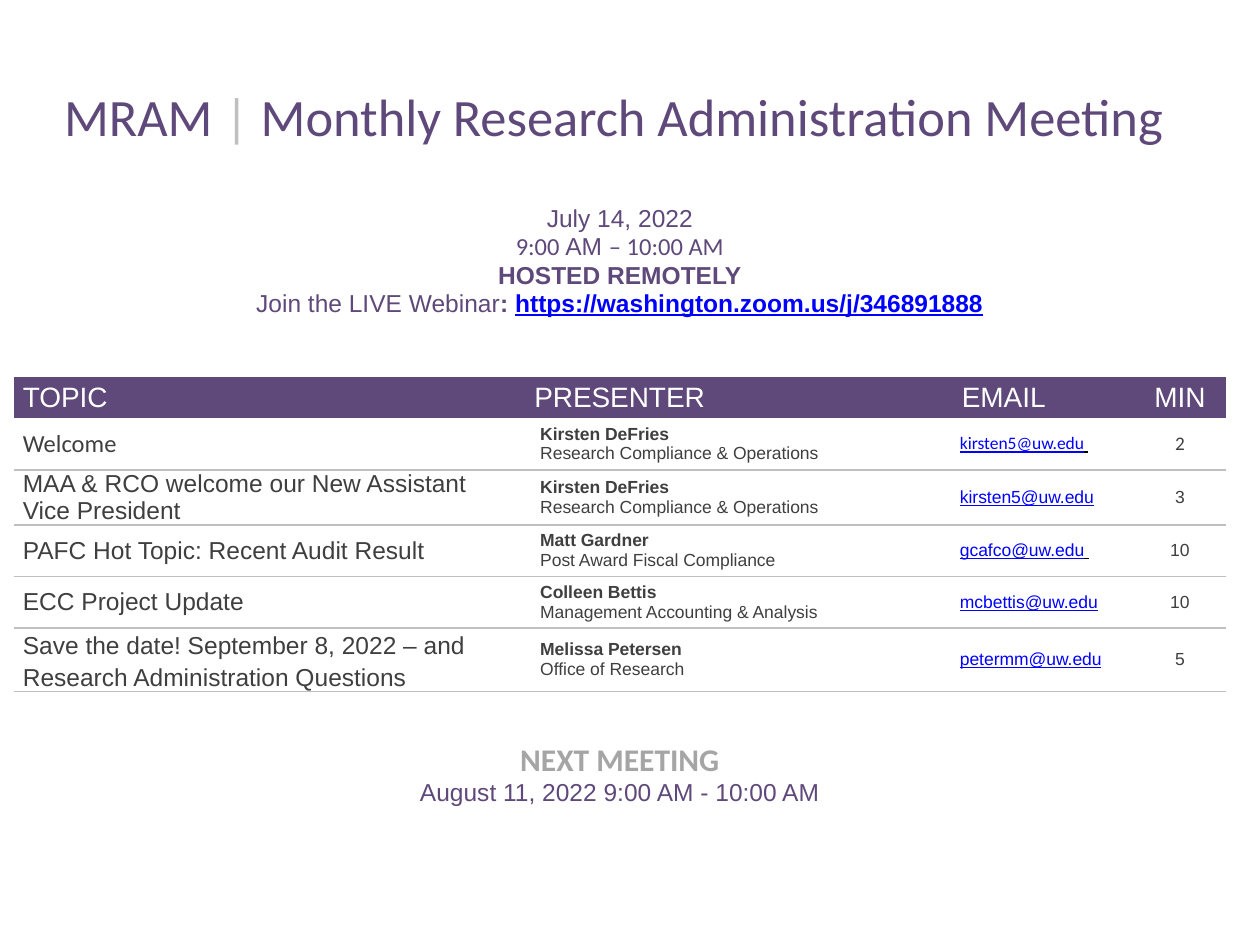
from dataclasses import dataclass
from typing import NamedTuple

from lxml.etree import SubElement
from pptx import Presentation
from pptx.dml.color import RGBColor as Rgb
from pptx.enum.text import MSO_ANCHOR as Anchor, PP_ALIGN as Align
from pptx.oxml import parse_xml
from pptx.oxml.ns import nsdecls, qn
from pptx.util import Cm, Pt


@dataclass(frozen=True)
class Theme:
    purple: str = "5F497A"
    rule: str = "BFBFBF"
    grey: str = "A5A5A5"
    ink: str = "3F3F3F"
    link: str = "0000FF"
    black: str = "000000"
    white: str = "FFFFFF"
    sans: str = "Arial"
    humanist: str = "Calibri"
    title: int = 30
    next_heading: int = 18
    header: int = 16
    body: int = 14
    first_minutes: int = 11
    detail: int = 10


class Piece(NamedTuple):
    text: str
    color: str
    size: int
    font: str = "Arial"
    bold: bool = False
    underline: bool = False


class Topic(NamedTuple):
    title: str
    presenter: str
    office: str
    email: str
    minutes: str
    font: str = "Arial"
    minutes_size: int = 10
    email_tail: str = ""
    spacing: float = 1.0


THEME = Theme()
NO_STYLE = "{2D5ABB26-0587-4C30-8999-92F81FD0307C}"
COLUMN_WIDTHS = (10.31, 8.46, 3.81, 1.85)
TITLE_ROW, DETAILS_ROW, HEADER_ROW, TOPIC_ROW, NEXT_ROW = 1.57, 4.55, 0.84, 1.04, 2.34
SIDE, WIDE_SIDE = 0.18, 0.3

TOPICS = (
    Topic("Welcome", "Kirsten DeFries", "Research Compliance & Operations",
          "kirsten5@uw.edu", "2", THEME.humanist, THEME.first_minutes, " "),
    Topic("MAA & RCO welcome our New Assistant Vice President", "Kirsten DeFries",
          "Research Compliance & Operations", "kirsten5@uw.edu", "3"),
    Topic("PAFC Hot Topic: Recent Audit Result", "Matt Gardner",
          "Post Award Fiscal Compliance", "gcafco@uw.edu", "10", email_tail=" "),
    Topic("ECC Project Update", "Colleen Bettis",
          "Management Accounting & Analysis", "mcbettis@uw.edu", "10"),
    Topic("Save the date! September 8, 2022 – and Research Administration Questions",
          "Melissa Petersen", "Office of Research", "petermm@uw.edu", "5", spacing=1.15),
)


def fill_cell(cell, lines: list[list[Piece]], fill: str = THEME.white,
              align: Align = Align.LEFT, anchor: Anchor = Anchor.MIDDLE,
              left: float = SIDE, right: float = SIDE, top: float = 0,
              bottom: float = 0, spacing: float = 1.0) -> None:
    """Write paragraphs of formatted pieces into a table cell."""
    cell.fill.solid()
    cell.fill.fore_color.rgb = Rgb.from_string(fill)
    layout = {"vertical_anchor": anchor, "margin_left": Cm(left), "margin_right": Cm(right),
              "margin_top": Cm(top), "margin_bottom": Cm(bottom)}
    for name, value in layout.items():
        setattr(cell, name, value)
    frame = cell.text_frame
    for index, pieces in enumerate(lines):
        paragraph = frame.add_paragraph() if index else frame.paragraphs[0]
        paragraph.alignment = align
        paragraph.line_spacing = spacing
        for piece in pieces:
            run = paragraph.add_run()
            run.text = piece.text
            font_format = {"name": piece.font, "size": Pt(piece.size),
                           "bold": piece.bold, "underline": piece.underline}
            for name, value in font_format.items():
                setattr(run.font, name, value)
            run.font.color.rgb = Rgb.from_string(piece.color)


def rule_below(cell) -> None:
    """Draw a thin line along the bottom of a cell."""
    border = parse_xml(f'<a:lnB {nsdecls("a")} w="{Pt(1)}"/>')
    solid = SubElement(border, qn("a:solidFill"))
    SubElement(solid, qn("a:srgbClr"), val=THEME.rule)
    cell._tc.get_or_add_tcPr().insert(0, border)


def add_agenda(slide):
    """Add the empty table with its full-width rows merged."""
    heights = [TITLE_ROW, DETAILS_ROW, HEADER_ROW, *[TOPIC_ROW] * len(TOPICS), NEXT_ROW]
    agenda = slide.shapes.add_table(
        len(heights), len(COLUMN_WIDTHS), Cm(0.28), Cm(1.47),
        Cm(sum(COLUMN_WIDTHS)), Cm(sum(heights))).table
    agenda._tbl.tblPr.find(qn("a:tableStyleId")).text = NO_STYLE
    agenda.horz_banding = False
    for column, width in zip(agenda.columns, COLUMN_WIDTHS):
        column.width = Cm(width)
    for row, height in zip(agenda.rows, heights):
        row.height = Cm(height)
    last_column = len(COLUMN_WIDTHS) - 1
    for row in (0, 1, len(heights) - 1):
        agenda.cell(row, 0).merge(agenda.cell(row, last_column))
    return agenda


def write_topic(agenda, row: int, topic: Topic) -> None:
    """Fill one agenda row: topic, presenter, e-mail and minutes."""
    t = THEME
    email = [Piece(topic.email, t.link, t.detail, topic.font, underline=True)]
    if topic.email_tail:
        email.append(Piece(topic.email_tail, t.black, t.detail, topic.font, underline=True))
    presenter = [[Piece(topic.presenter, t.ink, t.detail, bold=True)],
                 [Piece(topic.office, t.ink, t.detail)]]
    fill_cell(agenda.cell(row, 0), [[Piece(topic.title, t.ink, t.body, topic.font)]],
              spacing=topic.spacing)
    fill_cell(agenda.cell(row, 1), presenter, left=WIDE_SIDE, right=WIDE_SIDE)
    fill_cell(agenda.cell(row, 2), [email], left=WIDE_SIDE, right=WIDE_SIDE)
    fill_cell(agenda.cell(row, 3),
              [[Piece(topic.minutes, t.ink, topic.minutes_size, topic.font)]],
              align=Align.CENTER)
    for column in range(len(COLUMN_WIDTHS)):
        rule_below(agenda.cell(row, column))


def main() -> None:
    t = THEME
    deck = Presentation()
    deck.slide_width, deck.slide_height = Cm(25.4), Cm(19.05)
    slide = deck.slides.add_slide(deck.slide_layouts[6])
    agenda = add_agenda(slide)

    # Meeting title
    fill_cell(agenda.cell(0, 0), [[
        Piece("MRAM ", t.purple, t.title, t.humanist),
        Piece("|", t.rule, t.title, t.humanist),
        Piece(" Monthly Research Administration Meeting ", t.purple, t.title, t.humanist),
    ]], align=Align.CENTER, anchor=Anchor.BOTTOM)

    # Date, time and webinar address
    fill_cell(agenda.cell(1, 0), [
        [Piece("July 14, 2022", t.purple, t.body)],
        [Piece("9:00 ", t.purple, t.body, t.humanist), Piece("AM ", t.purple, t.body),
         Piece("– 10:00 AM", t.purple, t.body, t.humanist)],
        [Piece("HOSTED REMOTELY", t.purple, t.body, bold=True)],
        [Piece("Join the LIVE Webinar", t.purple, t.body),
         Piece(": ", t.purple, t.body, bold=True),
         Piece("https://washington.zoom.us/j/346891888", t.link, t.body,
               bold=True, underline=True)],
    ], align=Align.CENTER, anchor=Anchor.BOTTOM, bottom=1.19)

    # Column headings
    headings = (("TOPIC", Align.LEFT, SIDE), ("PRESENTER", Align.LEFT, SIDE),
                ("EMAIL", Align.LEFT, 0.34), ("MIN", Align.CENTER, SIDE))
    for column, (heading, align, left) in enumerate(headings):
        fill_cell(agenda.cell(2, column), [[Piece(heading, t.white, t.header)]],
                  fill=t.purple, align=align, left=left)

    # Agenda topics
    for row, topic in enumerate(TOPICS, start=3):
        write_topic(agenda, row, topic)

    # Next meeting
    fill_cell(agenda.cell(3 + len(TOPICS), 0), [
        [Piece("NEXT MEETING", t.grey, t.next_heading, t.humanist, bold=True)],
        [Piece("August 11, 2022 9:00 AM - 10:00 AM", t.purple, t.body)],
    ], align=Align.CENTER, top=1)

    deck.save("out.pptx")


if __name__ == "__main__":
    main()
